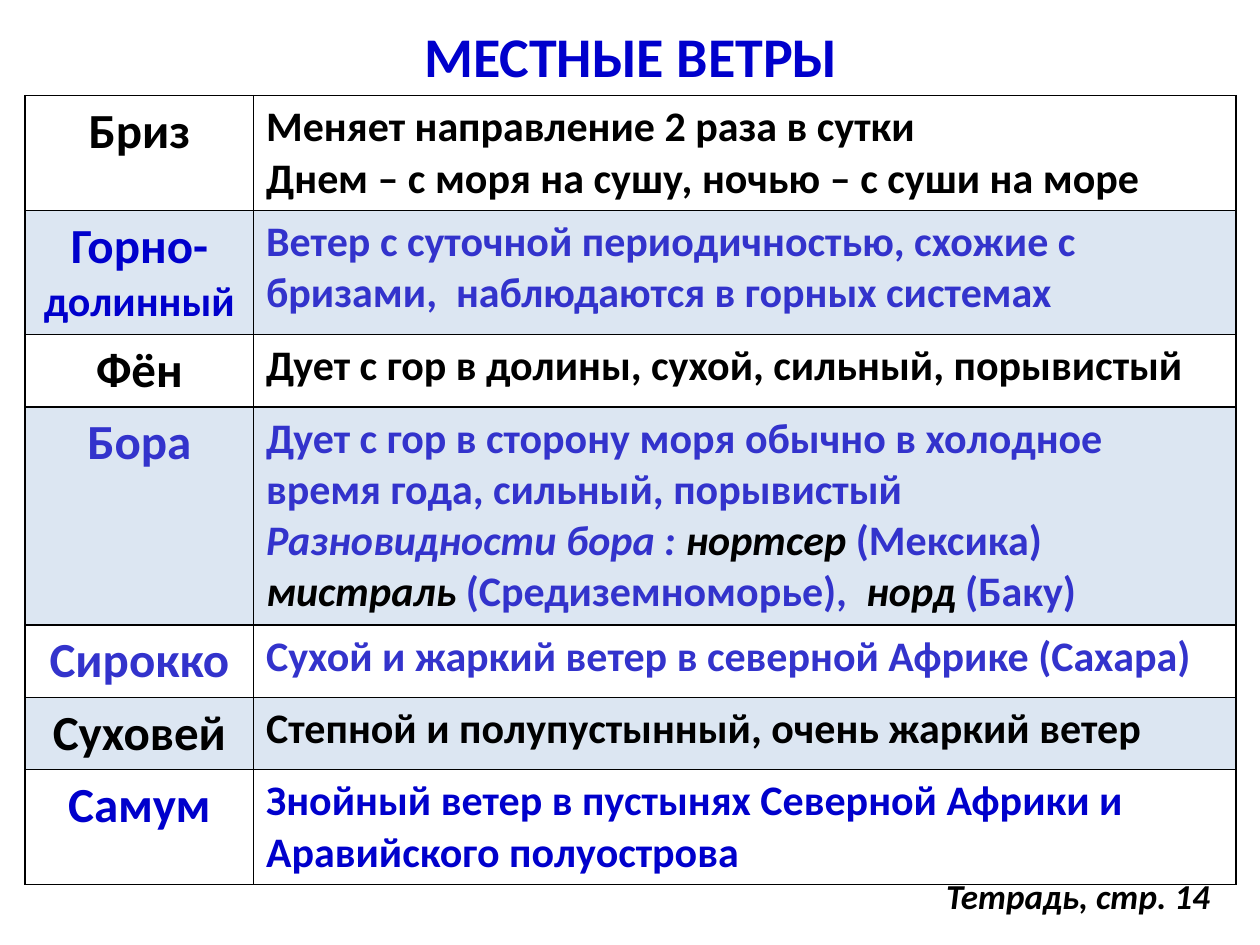
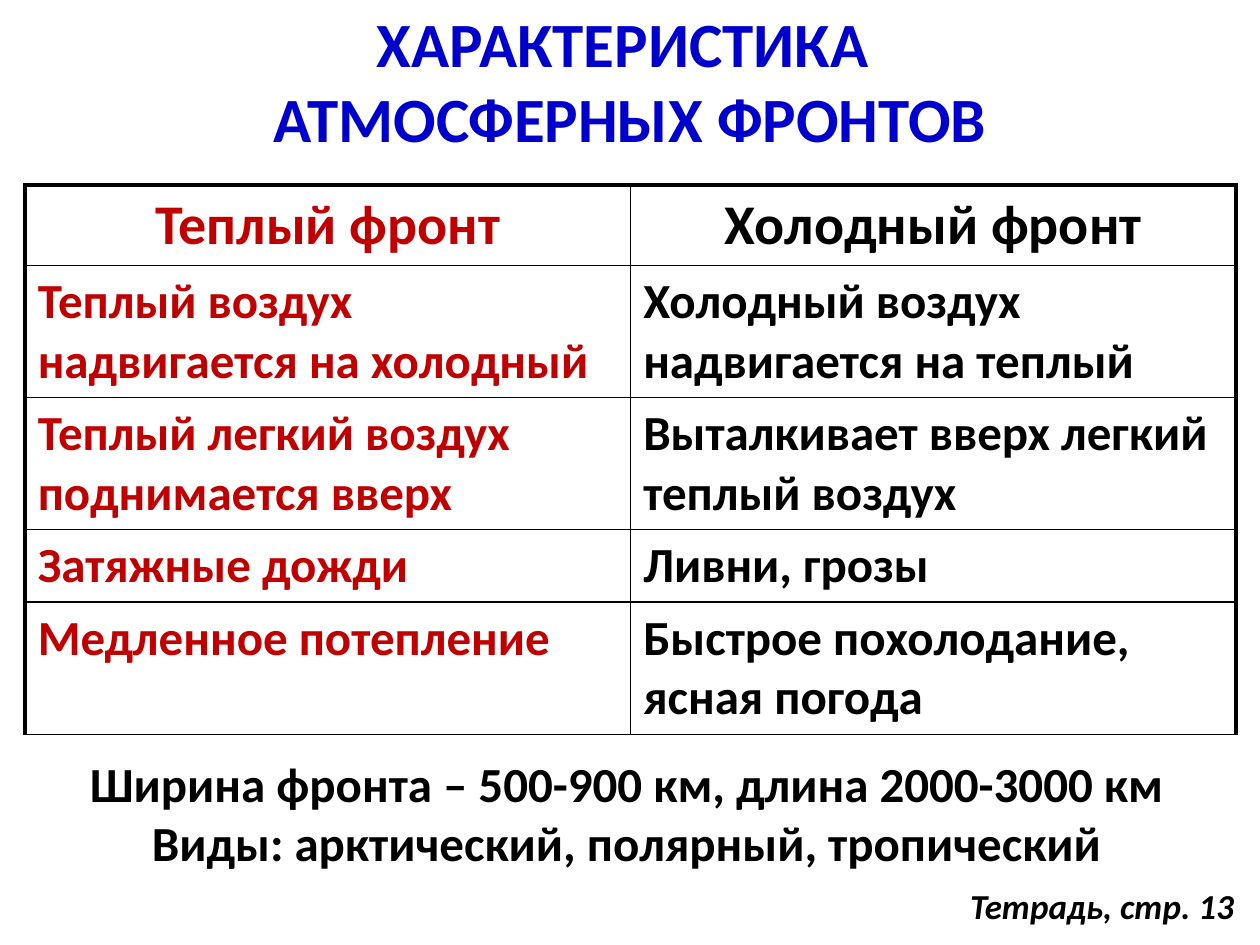
from dataclasses import dataclass

from lxml import etree
from pptx import Presentation
from pptx.dml.color import RGBColor
from pptx.enum.text import MSO_ANCHOR, MSO_AUTO_SIZE, PP_ALIGN
from pptx.oxml.ns import qn
from pptx.util import Pt

LEFT, CENTER = PP_ALIGN.LEFT, PP_ALIGN.CENTER
MIDDLE = MSO_ANCHOR.MIDDLE
FIXED, GROW = MSO_AUTO_SIZE.NONE, MSO_AUTO_SIZE.SHAPE_TO_FIT_TEXT


@dataclass(frozen=True)
class Theme:
    font: str = "Calibri"
    black: str = "000000"
    white: str = "FFFFFF"
    blue: str = "0000CC"
    indigo: str = "3333CC"
    red: str = "C00000"
    band: str = "DCE6F2"
    wind_title: int = 32
    front_title: int = 36
    heading: int = 32
    large: int = 28
    body: int = 24
    note: int = 20
    thin: float = 1
    thick: float = 2.25


theme = Theme()


def write_text(text_frame, text, align=LEFT, **text_format):
    paragraphs = [text] if isinstance(text, str) else text
    for index, runs in enumerate(paragraphs):
        paragraph = text_frame.paragraphs[0] if index == 0 else text_frame.add_paragraph()
        paragraph.alignment = align
        for words, changes in [(runs, {})] if isinstance(runs, str) else runs:
            style = {"size": theme.body, "color": theme.black, "italic": False, **text_format, **changes}
            for number, line in enumerate(words.split("\n")):
                if number:
                    paragraph.add_line_break()
                run = paragraph.add_run()
                run.text = line
                run.font.name = theme.font
                run.font.size = Pt(style["size"])
                run.font.bold = True
                run.font.italic = style["italic"]
                run.font.color.rgb = RGBColor.from_string(style["color"])


def add_grid(slide, top, widths, heights, outer, fills):
    frame = slide.shapes.add_table(
        len(heights), len(widths), Pt(14.4), Pt(top), Pt(sum(widths)), Pt(sum(heights)))
    table = frame.table
    table.first_row = False
    table.horz_banding = False
    for column, width in zip(table.columns, widths):
        column.width = Pt(width)
    for row_index, height in enumerate(heights):
        table.rows[row_index].height = Pt(height)
        for column_index in range(len(widths)):
            cell = table.cell(row_index, column_index)
            borders = {
                "a:lnL": outer if column_index == 0 else theme.thin,
                "a:lnR": outer if column_index == len(widths) - 1 else theme.thin,
                "a:lnT": outer if row_index == 0 else theme.thin,
                "a:lnB": theme.thin,
            }
            properties = cell._tc.get_or_add_tcPr()
            for tag, width in borders.items():
                line = etree.SubElement(properties, qn(tag), w=str(Pt(width)))
                solid = etree.SubElement(line, qn("a:solidFill"))
                etree.SubElement(solid, qn("a:srgbClr"), val=theme.black)
            cell.fill.solid()
            cell.fill.fore_color.rgb = RGBColor.from_string(fills[row_index % len(fills)])
    return table


presentation = Presentation()
presentation.slide_width = Pt(720)
presentation.slide_height = Pt(540)
title_only = presentation.slide_layouts[5]

slide_frames = [
    ("МЕСТНЫЕ ВЕТРЫ", theme.wind_title, (36.7, 15.1, 648, 33.1),
     "Тетрадь, стр. 14", (533.5, 496.1)),
    ("ХАРАКТЕРИСТИКА \nАТМОСФЕРНЫХ ФРОНТОВ", theme.front_title, (0, 0.7, 720, 90),
     "Тетрадь, стр. 13", (547.2, 501.8)),
]
slides = []
for title_text, title_size, title_box, note_text, note_corner in slide_frames:
    slide = presentation.slides.add_slide(title_only)
    slides.append(slide)
    title = slide.shapes.title
    title.left, title.top, title.width, title.height = map(Pt, title_box)
    title.text_frame.auto_size = FIXED
    title.text_frame.vertical_anchor = MIDDLE
    write_text(title.text_frame, title_text, align=CENTER, size=title_size, color=theme.blue)

    note_left, note_top = note_corner
    note = slide.shapes.add_textbox(Pt(note_left), Pt(note_top), Pt(166.3), Pt(31.5))
    note.text_frame.word_wrap = False
    note.text_frame.auto_size = GROW
    write_text(note.text_frame, note_text, size=theme.note, italic=True)

winds_slide, fronts_slide = slides

variety = {"color": theme.black, "italic": True}
winds = [
    ("Бриз", theme.black,
     ["Меняет направление 2 раза в сутки",
      "Днем – с моря на сушу, ночью – с суши на море"], theme.black, 65.5),
    ([[("Горно-", {}), ("долинный", {"size": theme.body})]], theme.blue,
     "Ветер с суточной периодичностью, схожие с бризами,  наблюдаются в горных системах",
     theme.indigo, 71),
    ("Фён", theme.black,
     "Дует с гор в долины, сухой, сильный, порывистый", theme.black, 41.4),
    ("Бора", theme.indigo,
     ["Дует с гор в сторону моря обычно в холодное время года, сильный, порывистый",
      [("Разновидности бора : ", {"italic": True}), ("нортсер ", variety), ("(Мексика)", {})],
      [("мистраль ", variety), ("(Средиземноморье),  ", {}), ("норд ", variety), ("(Баку)", {})]],
     theme.indigo, 124.5),
    ("Сирокко", theme.indigo,
     "Сухой и жаркий ветер в северной Африке (Сахара)", theme.indigo, 41.4),
    ("Суховей", theme.black,
     "Степной и полупустынный, очень жаркий ветер", theme.black, 41.4),
    ("Самум", theme.blue,
     "Знойный ветер в пустынях Северной Африки и Аравийского полуострова", theme.blue, 65.5),
]
wind_table = add_grid(winds_slide, 54.7, [130.5, 561.5], [wind[-1] for wind in winds],
                      theme.thin, [theme.white, theme.band])
for row_index, (name, name_color, description, description_color, height) in enumerate(winds):
    write_text(wind_table.cell(row_index, 0).text_frame, name, align=CENTER,
               size=theme.large, color=name_color)
    write_text(wind_table.cell(row_index, 1).text_frame, description, color=description_color)

fronts = [
    ("Теплый фронт", "Холодный фронт", 45.8),
    ("Теплый воздух надвигается на холодный", "Холодный воздух надвигается на теплый", 75.6),
    ("Теплый легкий воздух поднимается вверх", "Выталкивает вверх легкий теплый воздух", 75.6),
    ("Затяжные дожди", "Ливни, грозы", 41.4),
    ("Медленное потепление", "Быстрое похолодание, ясная погода", 75.6),
]
front_table = add_grid(fronts_slide, 105.8, [346, 346], [front[-1] for front in fronts],
                       theme.thick, [theme.white])
for row_index, (warm, cold, height) in enumerate(fronts):
    is_heading = row_index == 0
    for column_index, (text, color) in enumerate([(warm, theme.red), (cold, theme.black)]):
        write_text(front_table.cell(row_index, column_index).text_frame, text,
                   align=CENTER if is_heading else LEFT,
                   size=theme.heading if is_heading else theme.large, color=color)

summary = fronts_slide.shapes.add_textbox(Pt(2.2), Pt(427), Pt(711.4), Pt(75))
summary.text_frame.word_wrap = True
summary.text_frame.auto_size = GROW
write_text(summary.text_frame,
           ["Ширина фронта – 500-900 км, длина 2000-3000 км",
            "Виды: арктический, полярный, тропический"],
           align=CENTER, size=theme.large)

presentation.save("out.pptx")
